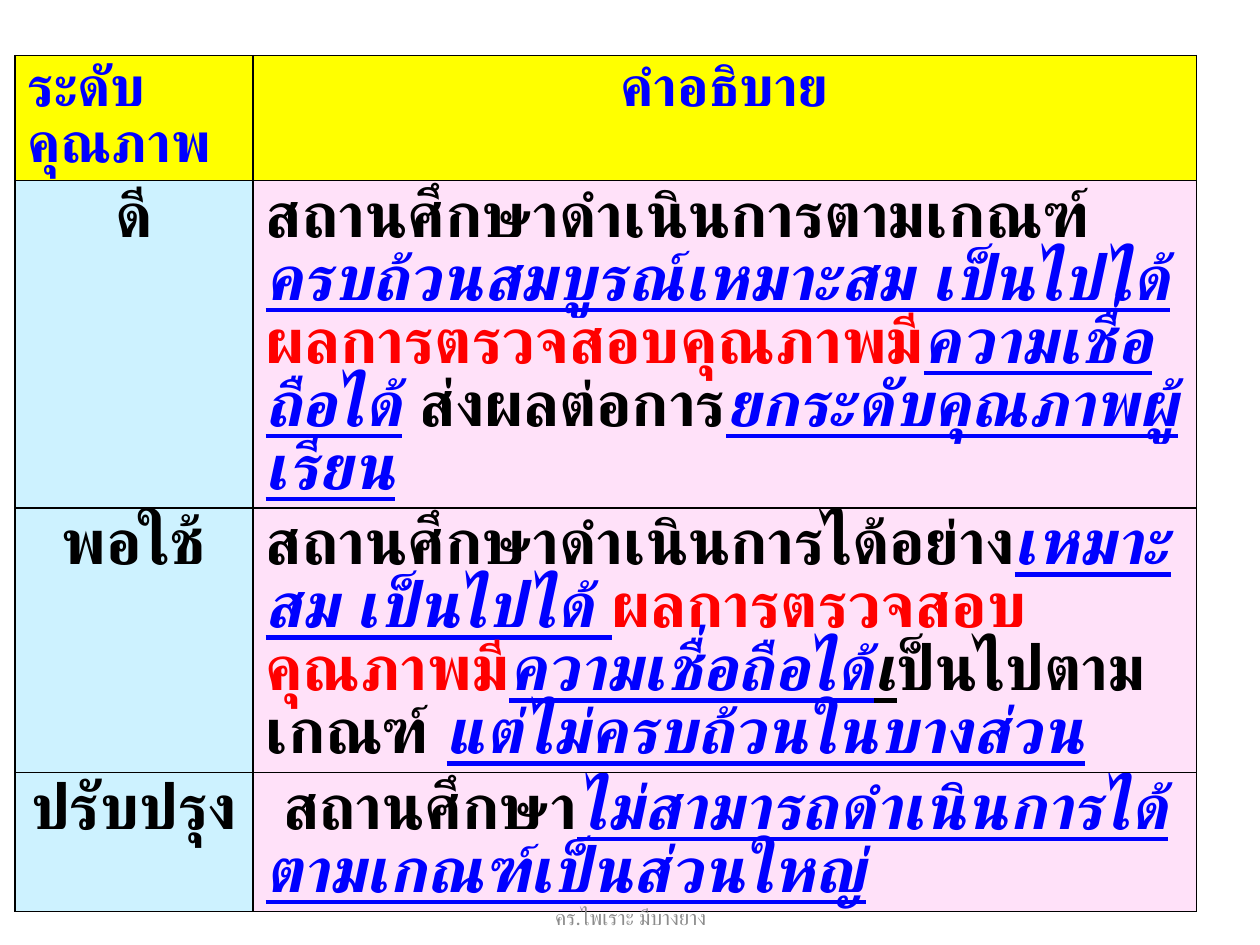
from lxml import etree
from pptx import Presentation
from pptx.dml.color import RGBColor
from pptx.enum.lang import MSO_LANGUAGE_ID
from pptx.enum.text import MSO_ANCHOR, PP_ALIGN
from pptx.util import Cm, Pt

LEFT, CENTER = PP_ALIGN.LEFT, PP_ALIGN.CENTER
MIDDLE = MSO_ANCHOR.MIDDLE
THAI = MSO_LANGUAGE_ID.THAI
FONT = "Calibri"
BLACK, BLUE, RED = "000000", "0000FF", "FF0000"
YELLOW, CYAN, PINK = "FFFF00", "CDF2FF", "FFE1F9"
NS = "http://schemas.openxmlformats.org/drawingml/2006/main"


def rgb(color):
    return RGBColor.from_string(color)


def set_borders(cell, color, width):
    tcPr = cell._tc.get_or_add_tcPr()
    for i, side in enumerate(("lnL", "lnR", "lnT", "lnB")):
        ln = etree.Element(f"{{{NS}}}{side}", w=str(Pt(width)))
        fill = etree.SubElement(ln, f"{{{NS}}}solidFill")
        etree.SubElement(fill, f"{{{NS}}}srgbClr", val=color)
        tcPr.insert(i, ln)


prs = Presentation()
prs.slide_width, prs.slide_height = Cm(25.4), Cm(19.05)
s = prs.slides.add_slide(prs.slide_layouts[6])

# Table wording: runs of (text, colour, emphasised)
rows = [
    ([("ระดับคุณภาพ", BLUE, False)], [("คำอธิบาย", BLUE, False)]),
    ([("ดี", BLACK, False)], [
        ("สถานศึกษาดำเนินการตามเกณฑ์", BLACK, False),
        ("ครบถ้วนสมบูรณ์เหมาะสม เป็นไปได้ ", BLUE, True),
        ("ผลการตรวจสอบคุณภาพมี", RED, False),
        ("ความเชื่อถือได้", BLUE, True),
        (" ส่งผลต่อการ", BLACK, False),
        ("ยกระดับคุณภาพผู้เรียน", BLUE, True),
    ]),
    ([("พอใช้", BLACK, False)], [
        ("สถานศึกษาดำเนินการได้อย่าง", BLACK, False),
        ("เหมาะสม เป็นไปได้ ", BLUE, True),
        ("ผลการตรวจสอบคุณภาพมี", RED, False),
        ("ความเชื่อถือได้", BLUE, True),
        ("เ", BLACK, True),
        ("ป็นไปตามเกณฑ์ ", BLACK, False),
        ("แต่ไม่ครบถ้วนในบางส่วน", BLUE, True),
    ]),
    ([("ปรับปรุง", BLACK, False)], [
        (" สถานศึกษา", BLACK, False),
        ("ไม่สามารถดำเนินการได้ตามเกณฑ์เป็นส่วนใหญ่", BLUE, True),
    ]),
]

# Quality level table; rows grow with their text
frame = s.shapes.add_table(len(rows), 2, Cm(0.3), Cm(1.12), Cm(23.82), Cm(8.44))
table = frame.table
table.columns[0].width, table.columns[1].width = Cm(4.8), Cm(19.02)
frame.height = Cm(15.06)

for i, row in enumerate(rows):
    for j, runs in enumerate(row):
        header = i == 0
        cell = table.cell(i, j)
        cell.fill.solid()
        cell.fill.fore_color.rgb = rgb(YELLOW if header else (CYAN, PINK)[j])
        set_borders(cell, BLACK, 1)
        p = cell.text_frame.paragraphs[0]
        # The header row reverses the alignment of the body
        p.alignment = CENTER if header == (j == 1) else LEFT
        for text, color, emphasised in runs:
            r = p.add_run()
            r.text = text
            r.font.name = FONT
            r.font.size = Pt(32 if header else 36)
            r.font.bold = True
            r.font.italic = r.font.underline = emphasised
            r.font.color.rgb = rgb(color)
            r.font.language_id = THAI

# Footer
sp = s.shapes.add_textbox(Cm(8.69), Cm(17.98), Cm(8.05), Cm(1.02))
tf = sp.text_frame
tf.word_wrap = True
tf.vertical_anchor = MIDDLE
p = tf.paragraphs[0]
p.alignment = CENTER
r = p.add_run()
r.text = "คร.ไพเราะ มีบางยาง"
r.font.name = FONT
r.font.size = Pt(12)
r.font.color.rgb = rgb("8C8C8C")
r.font.language_id = THAI

prs.save("out.pptx")
